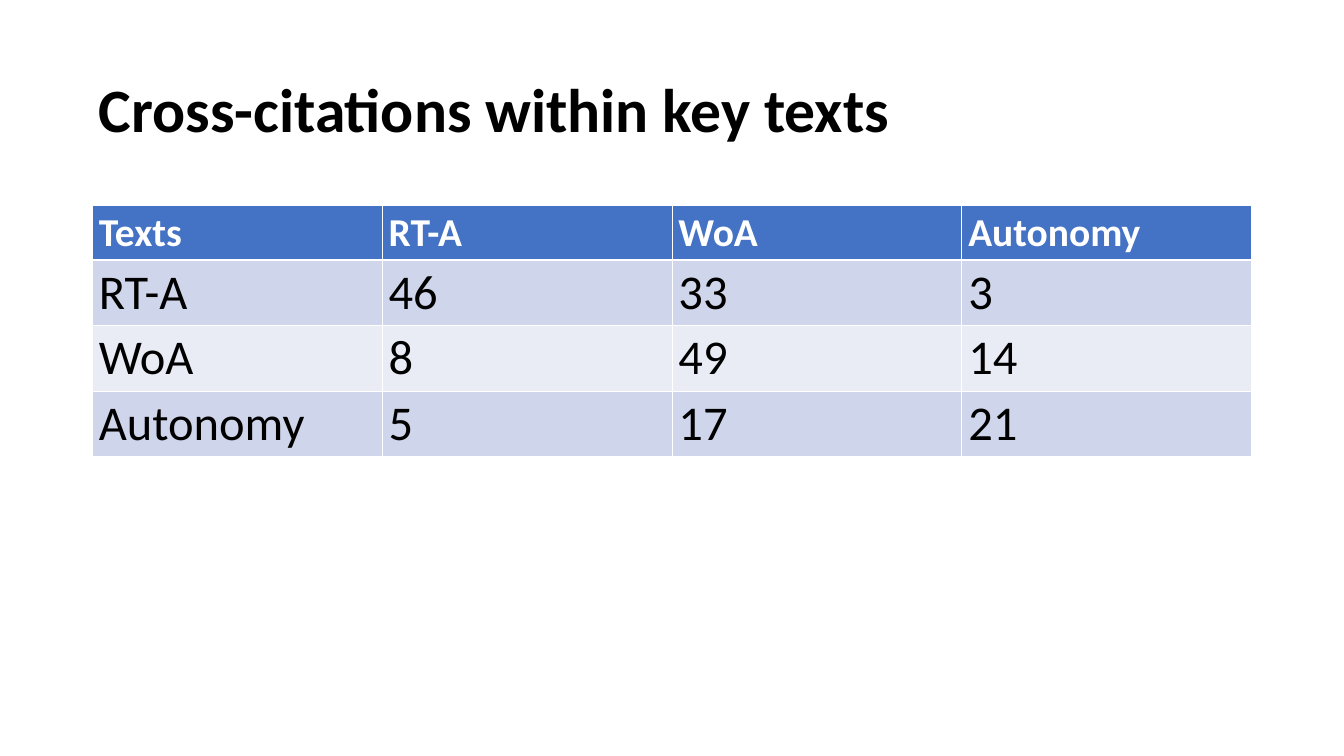
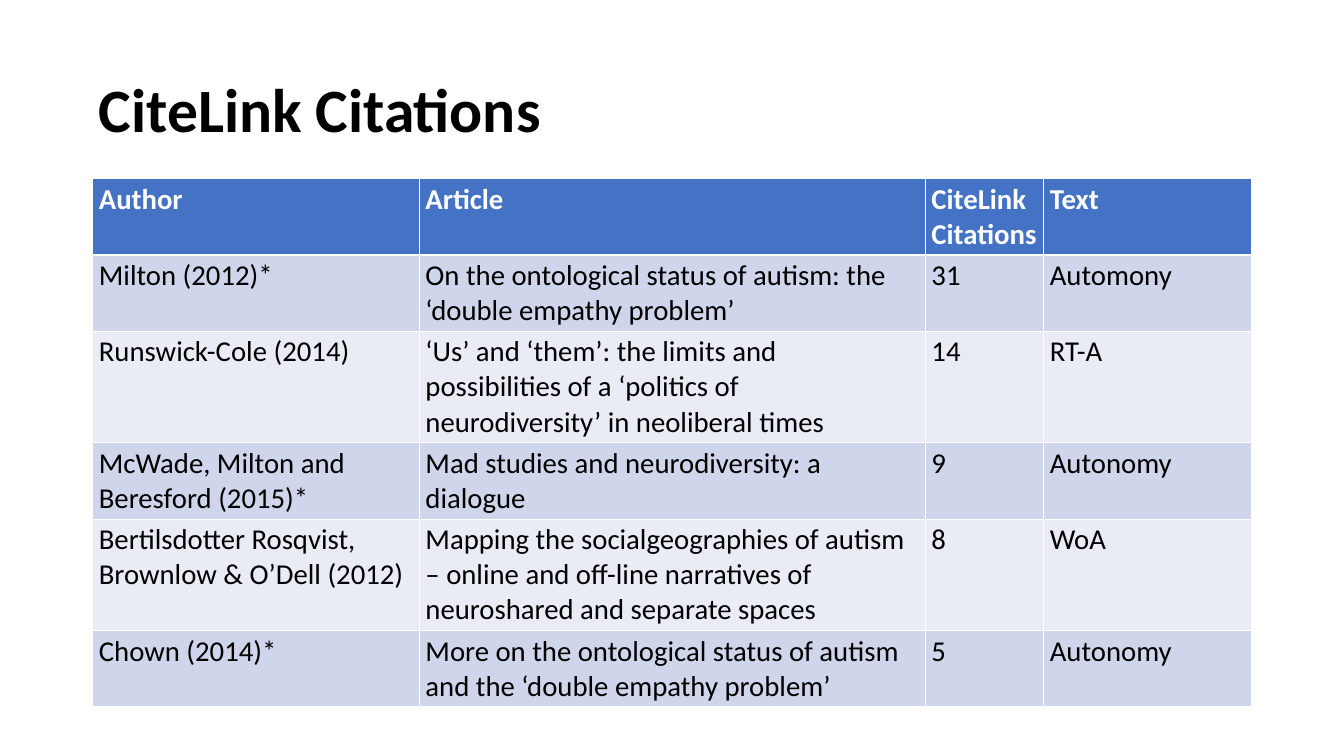
from lxml.etree import SubElement
from pptx import Presentation
from pptx.dml.color import RGBColor
from pptx.enum.text import MSO_ANCHOR
from pptx.oxml.ns import qn
from pptx.util import Cm, Pt

FONT = "Calibri"
BLACK = RGBColor(0x00, 0x00, 0x00)
WHITE = RGBColor(0xFF, 0xFF, 0xFF)
BLUE = RGBColor(0x44, 0x72, 0xC4)
BANDS = (RGBColor(0xE9, 0xEB, 0xF5), RGBColor(0xCF, 0xD5, 0xEA))

LEFT, WIDTH = 3.63, 45.54
TITLE_BOX = (LEFT, 1.57, WIDTH, 5.74)

CROSS_CITATIONS = [
    ("Texts", "RT-A", "WoA", "Autonomy"),
    ("RT-A", "46", "33", "3"),
    ("WoA", "8", "49", "14"),
    ("Autonomy", "5", "17", "21"),
]
ARTICLES = [
    ("Author", "Article", "CiteLink Citations", "Text"),
    ("Milton (2012)*",
     "On the ontological status of autism: the ‘double empathy problem’",
     "31", "Automony"),
    ("Runswick-Cole (2014)",
     "‘Us’ and ‘them’: the limits and possibilities of a ‘politics of "
     "neurodiversity’ in neoliberal times",
     "14", "RT-A"),
    ("McWade, Milton and\nBeresford (2015)*",
     "Mad studies and neurodiversity: a dialogue",
     "9", "Autonomy"),
    ("Bertilsdotter Rosqvist,\nBrownlow & O’Dell (2012)",
     "Mapping the socialgeographies of autism – online and off-line "
     "narratives of neuroshared and separate spaces",
     "8", "WoA"),
    ("Chown (2014)*",
     "More on the ontological status of autism and the ‘double empathy problem’",
     "5", "Autonomy"),
]


def add_run(p, text, size, color, bold):
    """Add one formatted run to a paragraph."""
    r = p.add_run()
    r.text = text
    r.font.name = FONT
    r.font.size = Pt(size)
    r.font.bold = bold
    r.font.color.rgb = color


def add_title(s, box, text):
    """Place the bold slide title, centred vertically in its box."""
    tf = s.shapes.add_textbox(*map(Cm, box)).text_frame
    tf.word_wrap = True
    tf.vertical_anchor = MSO_ANCHOR.MIDDLE
    p = tf.paragraphs[0]
    p.line_spacing = 0.9
    add_run(p, text, 68.6, BLACK, True)


def set_borders(cell, top, bottom):
    """Draw white cell borders, with the given top and bottom widths in points."""
    tc_pr = cell._tc.get_or_add_tcPr()
    widths = {"a:lnL": 1, "a:lnR": 1, "a:lnT": top, "a:lnB": bottom}
    for i, (tag, width) in enumerate(widths.items()):
        ln = SubElement(tc_pr, qn(tag), w=str(Pt(width)))
        fill = SubElement(ln, qn("a:solidFill"))
        SubElement(fill, qn("a:srgbClr"), val=str(WHITE))
        tc_pr.insert(i, ln)


def fill_cell(cell, text, row, size):
    """Write and style one cell according to its row."""
    header = row == 0
    cell.fill.solid()
    cell.fill.fore_color.rgb = BLUE if header else BANDS[row % 2]
    set_borders(cell, 3 if row == 1 else 1, 3 if header else 1)
    tf = cell.text_frame
    for i, line in enumerate(text.split("\n")):
        p = tf.add_paragraph() if i else tf.paragraphs[0]
        add_run(p, line, size, WHITE if header else BLACK, header)


def add_data_table(s, top, rows, col_widths, row_heights, head_size, body_size):
    """Place a banded table with a blue header row."""
    table = s.shapes.add_table(
        len(rows), len(col_widths), Cm(LEFT), Cm(top),
        Cm(sum(col_widths)), Cm(sum(row_heights))).table
    for column, width in zip(table.columns, col_widths):
        column.width = Cm(width)
    for i, (row, height) in enumerate(zip(rows, row_heights)):
        table.rows[i].height = Cm(height)
        for j, text in enumerate(row):
            fill_cell(table.cell(i, j), text, i, body_size if i else head_size)


def add_table_slide(prs, title, *table_args):
    """Add a slide made of a title and a table."""
    s = prs.slides.add_slide(prs.slide_layouts[6])
    add_title(s, TITLE_BOX, title)
    add_data_table(s, *table_args)


def main():
    """Build and save the presentation."""
    prs = Presentation()
    prs.slide_width, prs.slide_height = Cm(52.8), Cm(29.7)
    add_table_slide(prs, "Cross-citations within key texts", 8.08, CROSS_CITATIONS,
                    [WIDTH / 4] * 4, [2.14] + [2.57] * 3, 44, 54)
    two_lines, three_lines = 3, 4.38
    add_table_slide(prs, "CiteLink Citations", 7.01, ARTICLES,
                    [12.83, 19.88, 4.65, 8.18],
                    [two_lines, two_lines, three_lines] * 1
                    + [two_lines, three_lines, two_lines], 32, 32)
    prs.save("out.pptx")


if __name__ == "__main__":
    main()
